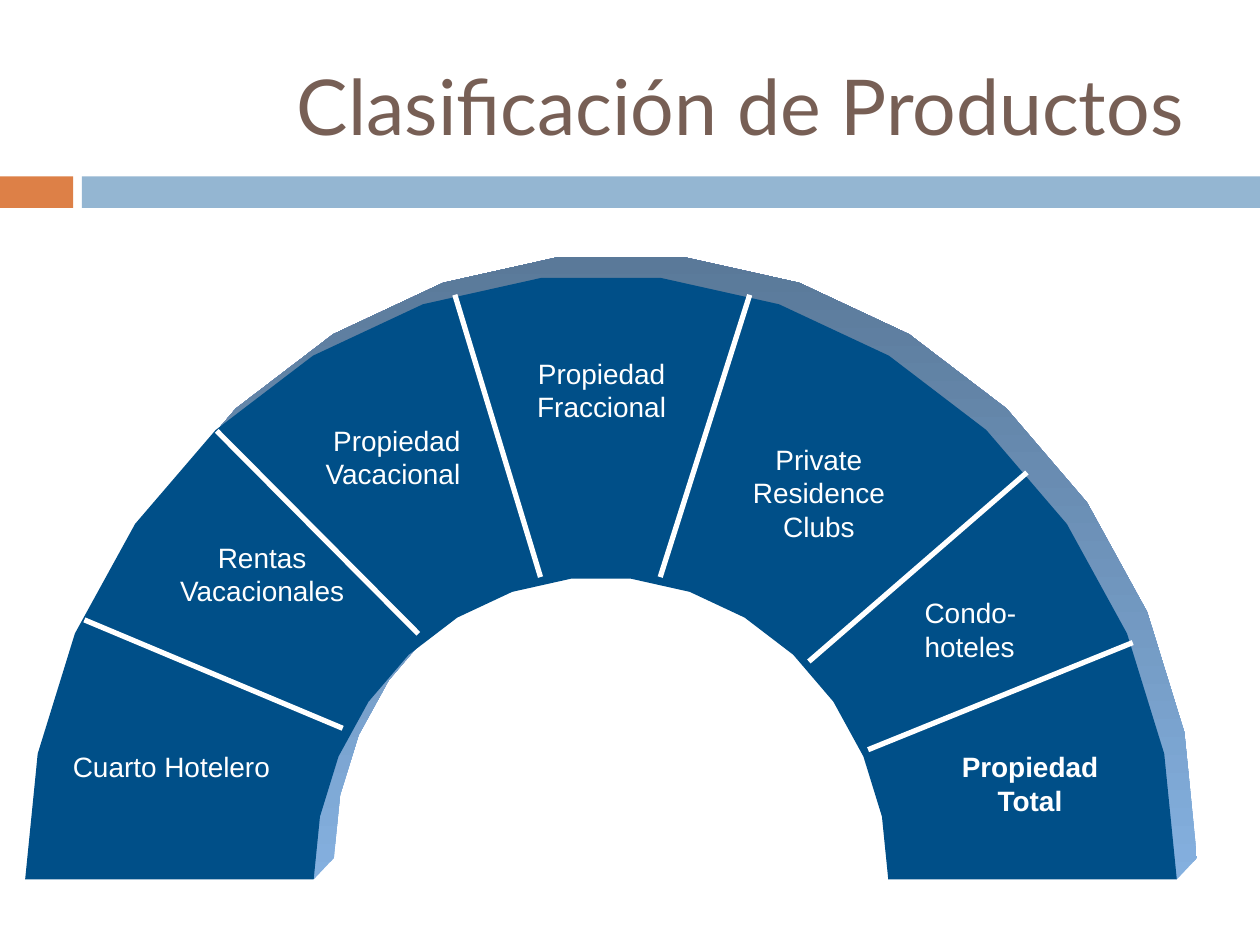
"""Build the slide with the arch of product classes."""
from math import cos, pi, sin

from lxml import etree
from pptx import Presentation
from pptx.dml.color import RGBColor
from pptx.enum import shapes, text
from pptx.oxml.ns import qn
from pptx.util import Inches, Pt

THEME = {
    "title": {"name": "Lato", "size": Pt(44), "color": "775F55"},
    "label": {"name": "Arial", "size": Pt(16), "color": "FFFFFF"},
    "orange": "DD8047", "blue": "94B6D2", "arch": "004F88",
    "depth_low": "84B0DF", "depth_high": "5A7999",
    "divider": "FFFFFF", "divider_width": Pt(3),
}
LEFT, CENTER, RIGHT = (text.PP_ALIGN.LEFT, text.PP_ALIGN.CENTER,
                       text.PP_ALIGN.RIGHT)

TITLE = "Clasificación de Productos"
BANDS = [("orange", 0, 0.58), ("blue", 0.65, 9.35)]
CLASSES = [
    (["Cuarto Hotelero"], (0.48, 5.9, 1.78, 0.37), LEFT, False),
    (["Rentas", "Vacacionales"], (1.32, 4.24, 1.52, 0.64), CENTER, False),
    (["Propiedad", "Vacacional "], (2.48, 3.31, 1.34, 0.64), CENTER, False),
    (["Propiedad", "Fraccional"], (4.16, 2.78, 1.23, 0.64), CENTER, False),
    (["Private ", "Residence ", "Clubs "], (5.87, 3.46, 1.32, 0.91), CENTER, False),
    (["Condo-", "hoteles"], (7.24, 4.68, 0.94, 0.64), LEFT, False),
    (["Propiedad", "Total"], (7.52, 5.9, 1.31, 0.64), CENTER, True),
]
DIVIDERS = [
    (0.67, 4.92, 2.72, 5.78), (1.72, 3.42, 3.32, 5.03),
    (3.61, 2.34, 4.29, 4.58), (5.95, 2.34, 5.24, 4.58),
    (8.15, 3.75, 6.42, 5.25), (8.99, 5.1, 6.89, 5.95),
]
ARCH_CENTER = (4.77, 6.98)
OUTER, INNER = (4.57, 4.8), (2.28, 2.4)
DEPTH = (0.16, -0.17)
STEPS = 15


def inches(values):
    return [Inches(value) for value in values]


def rgb(key):
    return RGBColor.from_string(THEME[key])


def write(frame, lines, style, align, bold=False):
    frame.text = "\n".join(lines)
    for paragraph in frame.paragraphs:
        paragraph.alignment = align
        font = paragraph.runs[0].font
        formats = {"name": style["name"], "size": style["size"], "bold": bold}
        for key, value in formats.items():
            setattr(font, key, value)
        font.color.rgb = RGBColor.from_string(style["color"])


def arc(radii, shift=(0, 0)):
    angles = [pi * (1 - step / STEPS) for step in range(STEPS + 1)]
    return [(ARCH_CENTER[0] + shift[0] + radii[0] * cos(angle),
             ARCH_CENTER[1] + shift[1] - radii[1] * sin(angle))
            for angle in angles]


def add_outline(slide, points):
    start, *others = [inches(point) for point in points]
    builder = slide.shapes.build_freeform(*start)
    builder.add_line_segments(others, close=True)
    outline = builder.convert_to_shape()
    outline.shadow.inherit = False
    outline.line.fill.background()
    return outline


def add_arch(slide):
    outer, inner = arc(OUTER), arc(INNER)
    depth = add_outline(slide, arc(OUTER, DEPTH) + [outer[-1], inner[-1]]
                        + arc(INNER, DEPTH)[::-1] + [inner[0], outer[0]])
    depth.fill.gradient()
    depth.fill.gradient_angle = 90
    for stop, key in zip(depth.fill.gradient_stops, ("depth_low", "depth_high")):
        stop.color.rgb = rgb(key)
    front = add_outline(slide, outer + inner[::-1])
    front.fill.solid()
    front.fill.fore_color.rgb = rgb("arch")


def add_divider(slide, ends):
    divider = slide.shapes.add_connector(shapes.MSO_CONNECTOR.STRAIGHT, *inches(ends))
    divider.line.color.rgb = rgb("divider")
    divider.line.width = THEME["divider_width"]
    etree.SubElement(divider._element.spPr, qn("a:effectLst"))


def add_label(slide, lines, place, align, bold):
    frame = slide.shapes.add_textbox(*inches(place)).text_frame
    frame.word_wrap = False
    frame.auto_size = text.MSO_AUTO_SIZE.SHAPE_TO_FIT_TEXT
    write(frame, lines, THEME["label"], align, bold)


def main():
    deck = Presentation()
    deck.slide_width, deck.slide_height = inches((10, 7.5))
    slide = deck.slides.add_slide(deck.slide_layouts[5])

    for key, left, width in BANDS:
        band = slide.shapes.add_shape(shapes.MSO_SHAPE.RECTANGLE,
                                      *inches((left, 1.4, width, 0.25)))
        band.shadow.inherit = False
        band.fill.solid()
        band.fill.fore_color.rgb = rgb(key)
        band.line.fill.background()

    title = slide.shapes.title
    title.left, title.top, title.width, title.height = inches((0.43, 0.36, 9.07, 0.95))
    title.text_frame.vertical_anchor = text.MSO_ANCHOR.MIDDLE
    write(title.text_frame, [TITLE], THEME["title"], RIGHT)

    add_arch(slide)
    for ends in DIVIDERS:
        add_divider(slide, ends)
    for product_class in CLASSES:
        add_label(slide, *product_class)
    deck.save("out.pptx")


if __name__ == "__main__":
    main()
